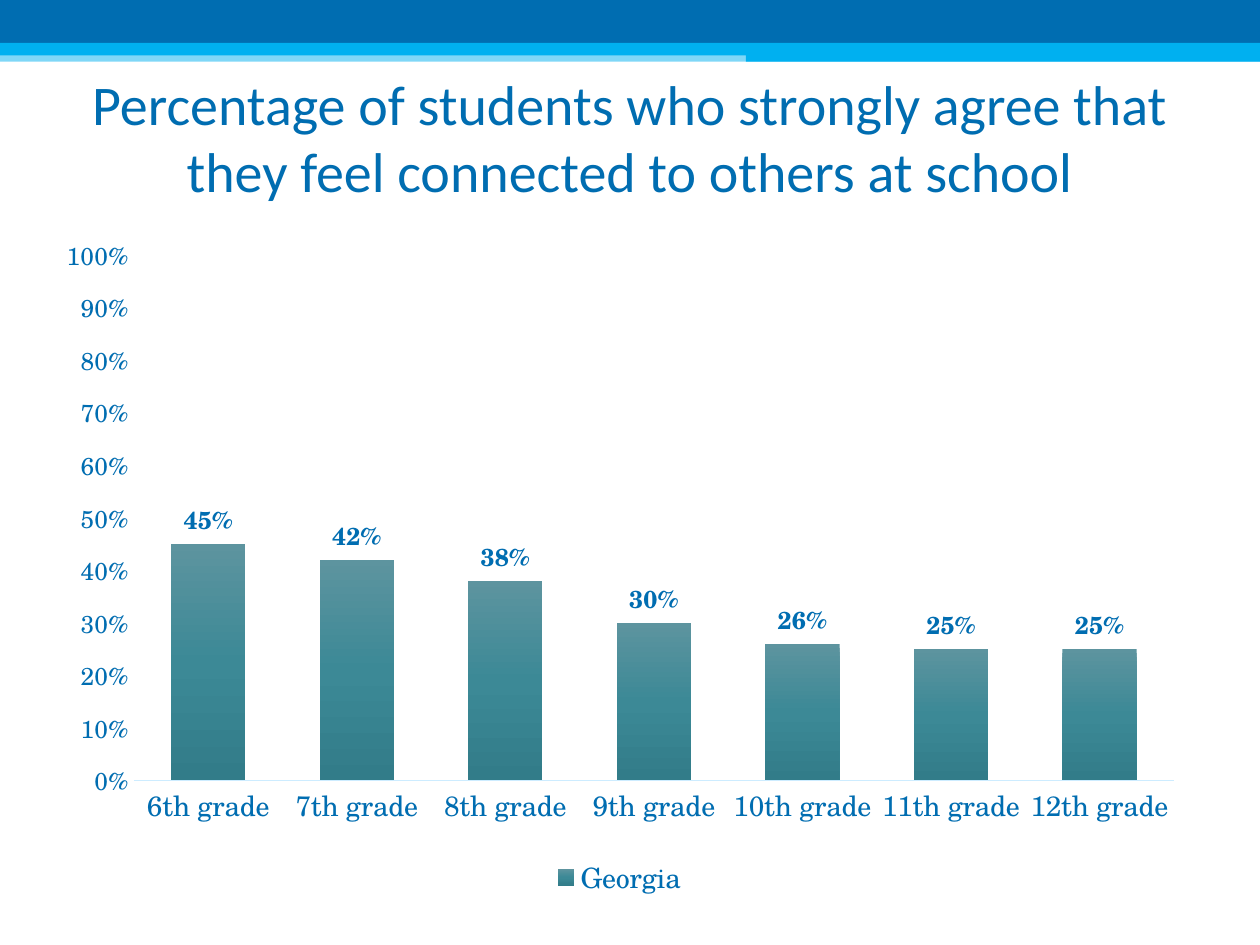
from lxml import etree
from pptx import Presentation
from pptx.chart.data import CategoryChartData
from pptx.dml.color import RGBColor
from pptx.enum.chart import XL_CHART_TYPE, XL_LABEL_POSITION, XL_LEGEND_POSITION, XL_TICK_MARK
from pptx.enum.shapes import MSO_SHAPE
from pptx.enum.text import MSO_ANCHOR, PP_ALIGN
from pptx.oxml import parse_xml
from pptx.oxml.ns import nsdecls, qn
from pptx.util import Inches, Pt

COLUMN = XL_CHART_TYPE.COLUMN_CLUSTERED
OUTSIDE_END = XL_LABEL_POSITION.OUTSIDE_END
BOTTOM = XL_LEGEND_POSITION.BOTTOM
NO_TICK = XL_TICK_MARK.NONE
RECTANGLE = MSO_SHAPE.RECTANGLE
MIDDLE = MSO_ANCHOR.MIDDLE
CENTER = PP_ALIGN.CENTER

BLUE = RGBColor(0x00, 0x6D, 0xB1)
SKY = RGBColor(0x00, 0xB0, 0xF0)
PALE = RGBColor(0xCD, 0xEC, 0xFF)
TEAL_STOPS = [(0, "5D949F"), (50, "3C8996"), (100, "327C89")]
CHART_FONT = "TeX Gyre Schola"

# Content
TITLE = "Percentage of students who strongly agree that they feel connected to others at school"
SERIES = "Georgia"
SHARES = {
    "6th grade": 0.45, "7th grade": 0.42, "8th grade": 0.38, "9th grade": 0.30,
    "10th grade": 0.26, "11th grade": 0.25, "12th grade": 0.25,
}
# Header bands: left, top, width, height, colour, opacity in percent
BANDS = [
    (0, 0.4, 10, 0.09, SKY, 50),
    (0, 0, 10, 0.34, BLUE, 100),
    (0, 0.34, 10, 0.1, SKY, 100),
    (5.92, 0.39, 4.08, 0.1, SKY, 100),
]
TITLE_AREA = (0.5, 0.5, 9, 1.17)
CHART_AREA = (0.33, 1.75, 9.17, 5.42)
PLOT_SHARES = {"x": 0.08, "y": 0.05, "w": 0.9, "h": 0.77}


def set_font(font, size, **extra):
    values = {"name": CHART_FONT, "size": Pt(size), "bold": False, **extra}
    for name, value in values.items():
        setattr(font, name, value)
    font.color.rgb = BLUE


def add_band(page, left, top, width, height, color, opacity):
    band = page.shapes.add_shape(RECTANGLE, *map(Inches, (left, top, width, height)))
    band.shadow.inherit = False
    band.fill.solid()
    band.fill.fore_color.rgb = color
    band.line.fill.background()
    if opacity < 100:
        tone = band.fill._xPr.find(".//" + qn("a:srgbClr"))
        etree.SubElement(tone, qn("a:alpha"), val=str(opacity * 1000))


def fill_gradient(series):
    stops = "".join(
        f'<a:gs pos="{place * 1000}"><a:srgbClr val="{color}"/></a:gs>'
        for place, color in TEAL_STOPS)
    series.format.fill.solid()
    properties = series.format.fill._xPr
    properties.replace(properties.find(qn("a:solidFill")), parse_xml(
        f'<a:gradFill {nsdecls("a")} rotWithShape="1"><a:gsLst>{stops}</a:gsLst>'
        '<a:lin ang="5400000" scaled="0"/></a:gradFill>'))


def place_plot(chart):
    area = chart._chartSpace.chart.plotArea
    for old in area.findall(qn("c:layout")):
        area.remove(old)
    sizes = "".join(f'<c:{key} val="{share}"/>' for key, share in PLOT_SHARES.items())
    area.insert(0, parse_xml(
        f'<c:layout {nsdecls("c")}><c:manualLayout><c:layoutTarget val="inner"/>'
        f'<c:xMode val="edge"/><c:yMode val="edge"/>{sizes}</c:manualLayout></c:layout>'))


def add_grade_chart(page):
    data = CategoryChartData(number_format="0%")
    data.categories = list(SHARES)
    data.add_series(SERIES, list(SHARES.values()))
    chart = page.shapes.add_chart(COLUMN, *map(Inches, CHART_AREA), data).chart
    chart.has_title = False
    set_font(chart.font, 14)
    place_plot(chart)

    # Columns and their labels
    plot = chart.plots[0]
    plot.gap_width, plot.overlap, plot.vary_by_categories = 100, -24, False
    fill_gradient(plot.series[0])
    labels = plot.series[0].data_labels
    labels.show_value = True
    labels.position = OUTSIDE_END
    labels.number_format, labels.number_format_is_linked = "0%", False
    set_font(labels.font, 14, bold=True)

    # Axes
    for axis, size in ((chart.category_axis, 16), (chart.value_axis, 14)):
        axis.major_tick_mark = axis.minor_tick_mark = NO_TICK
        axis.has_major_gridlines = False
        set_font(axis.tick_labels.font, size)
    baseline = chart.category_axis.format.line
    baseline.color.rgb, baseline.width = PALE, Pt(0.75)
    scale = chart.value_axis
    scale.minimum_scale, scale.maximum_scale, scale.major_unit = 0, 1, 0.1
    scale.tick_labels.number_format = "0%"
    scale.tick_labels.number_format_is_linked = False
    scale.format.line.fill.background()

    # Legend
    chart.has_legend = True
    chart.legend.position = BOTTOM
    chart.legend.include_in_layout = False
    set_font(chart.legend.font, 16)


def main():
    deck = Presentation()
    deck.slide_width, deck.slide_height = Inches(10), Inches(7.5)
    page = deck.slides.add_slide(deck.slide_layouts[5])

    for band in BANDS:
        add_band(page, *band)

    # Title
    title = page.shapes.title
    title.left, title.top, title.width, title.height = map(Inches, TITLE_AREA)
    title.text_frame.text = TITLE
    title.text_frame.word_wrap = True
    title.text_frame.vertical_anchor = MIDDLE
    para = title.text_frame.paragraphs[0]
    para.alignment = CENTER
    set_font(para.runs[0].font, 32, name="Calibri")

    add_grade_chart(page)
    deck.save("out.pptx")


if __name__ == "__main__":
    main()
